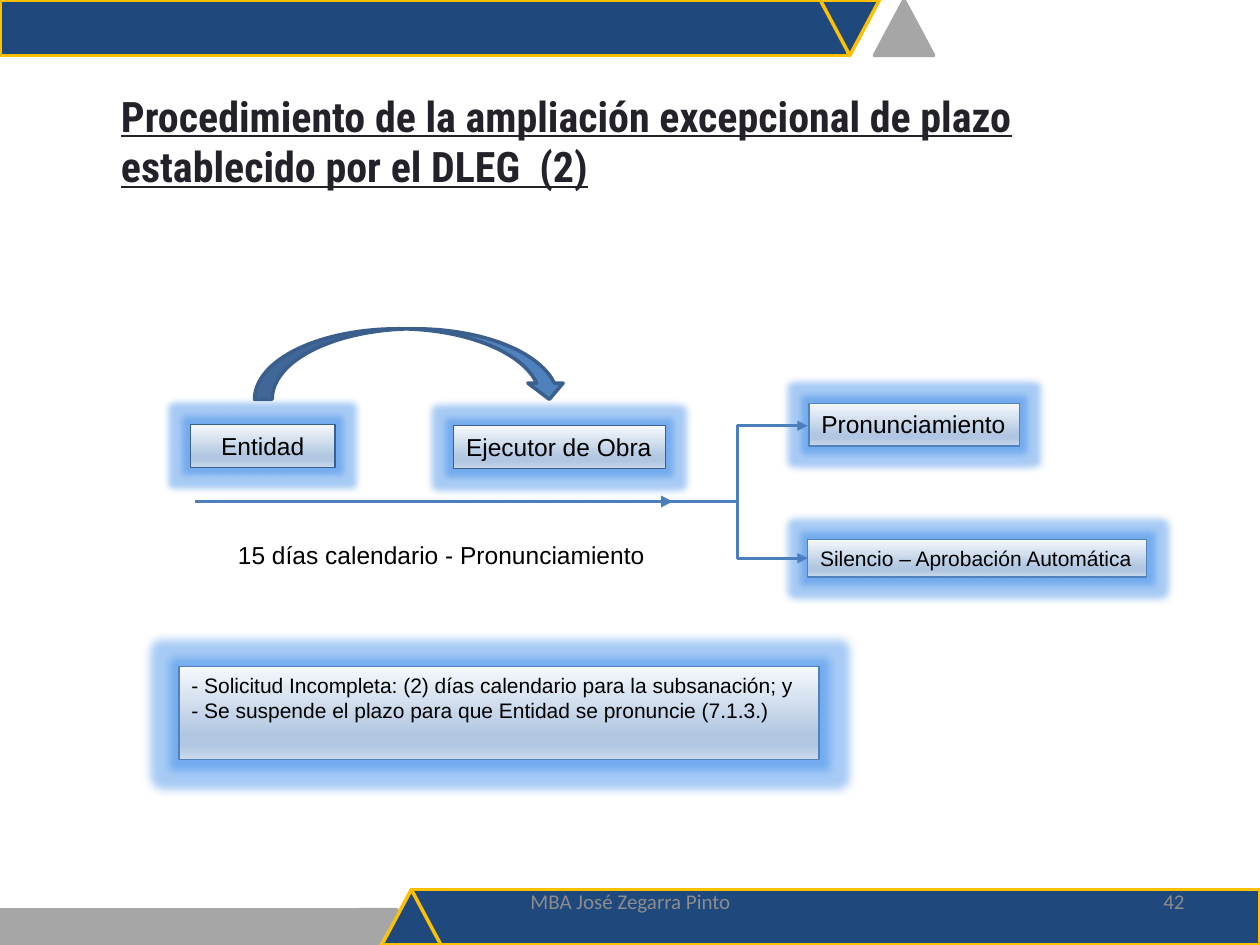
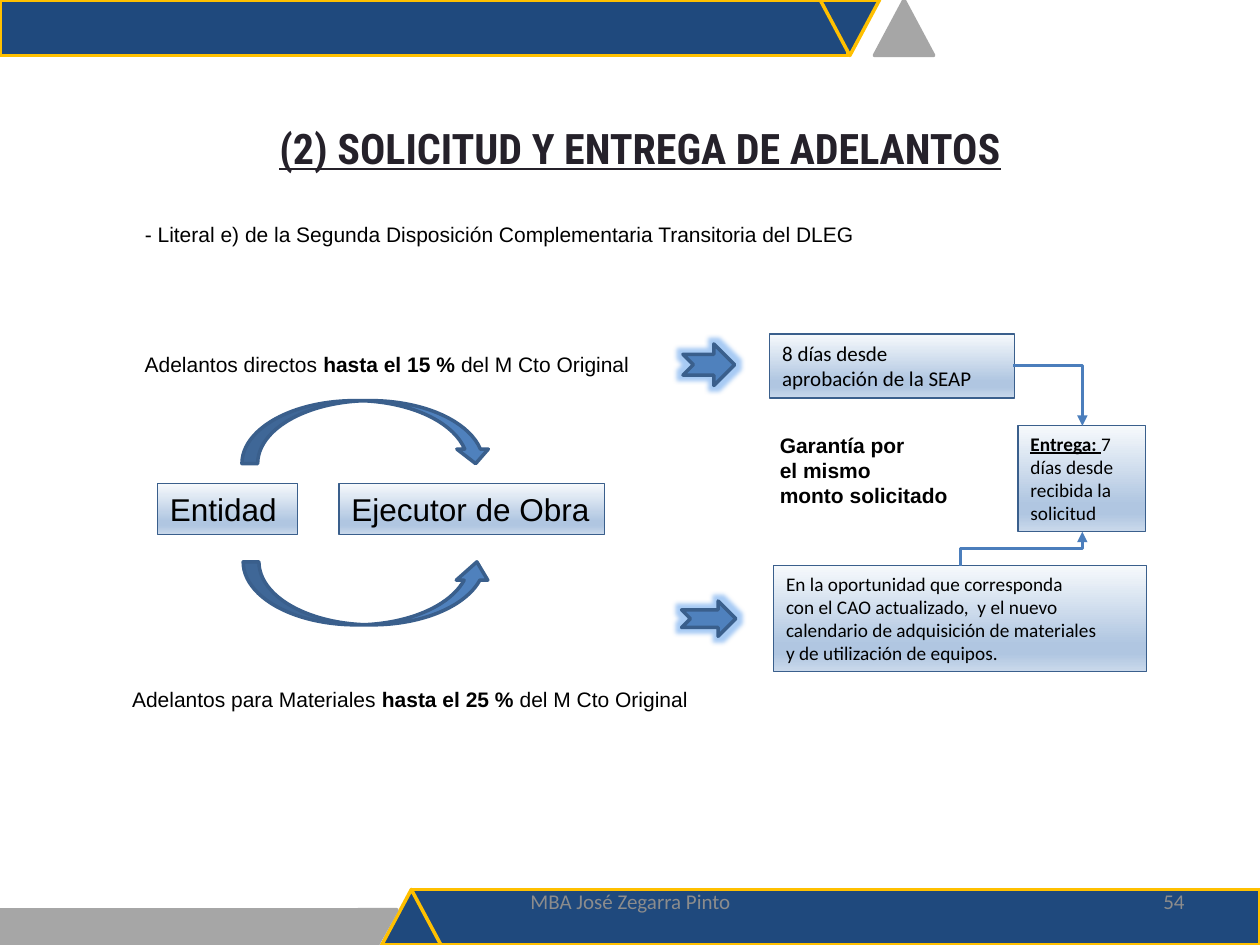
from lxml import etree
from pptx import Presentation
from pptx import util as u
from pptx.dml.color import RGBColor
from pptx.enum import shapes, text
from pptx.oxml import ns

COLORS = {
    "navy": "1F497D", "gold": "FFC000", "gray": "A6A6A6", "footer": "8C8C8C",
    "title": "25212A", "black": "000000", "blue": "4F81BD", "edge": "3A5F8C",
    "connector": "4B7EBC", "glow": "257DE6",
}
PANEL_STOPS = ((0, "F6F9FC"), (74, "B0C6E1"), (83, "B0C6E1"), (100, "CAD9EB"))
KIND = shapes.MSO_SHAPE
ALIGN = text.PP_ALIGN
ANCHOR = text.MSO_ANCHOR


def color(name):
    """Return the RGB value of a named colour."""
    return RGBColor.from_string(COLORS[name])


def add_child(parent, tag, **attributes):
    """Append a drawing element and return it."""
    values = {key: str(value) for key, value in attributes.items()}
    return etree.SubElement(parent, ns.qn(tag), values)


def inside(region, left, top, width, height):
    """Turn lengths relative to a region's corner into slide lengths."""
    return [u.Inches(round(value, 2)) for value in
            (region[0] + left, region[1] + top, width, height)]


def write(box, lines, size=12, font="Arial", ink="black", bold=False, underline=False,
          align=ALIGN.LEFT, anchor=ANCHOR.TOP, wrap=True):
    """Fill a box with lines, each a string or a list of (text, is marked) spans."""
    frame = box.text_frame
    frame.auto_size = text.MSO_AUTO_SIZE.NONE
    frame.word_wrap = wrap
    frame.vertical_anchor = anchor
    for index, line in enumerate(lines):
        para = frame.add_paragraph() if index else frame.paragraphs[0]
        para.alignment = align
        for words, marked in [(line, bold)] if isinstance(line, str) else line:
            span = para.add_run()
            span.text = words
            span.font.size = u.Pt(size)
            span.font.name = font
            span.font.bold = marked
            span.font.underline = underline and marked
            span.font.color.rgb = color(ink)
    return box


def add_label(page, place, lines, **style):
    """Add a plain text box."""
    return write(page.shapes.add_textbox(*place), lines, **style)


def add_figure(page, kind, place, fill="blue", edge="edge", weight=2, turn=0, glow=0):
    """Add a preset shape with a solid fill and an optional glow."""
    figure = page.shapes.add_shape(kind, *place)
    figure.rotation = turn
    figure.shadow.inherit = False
    figure.fill.solid()
    figure.fill.fore_color.rgb = color(fill)
    figure.line.color.rgb = color(edge)
    figure.line.width = u.Pt(weight)
    if glow:
        effects = figure._element.spPr.find(ns.qn("a:effectLst"))
        halo = add_child(effects, "a:glow", rad=u.Pt(glow))
        tint = add_child(halo, "a:srgbClr", val=COLORS["glow"])
        add_child(tint, "a:alpha", val=40000)
    return figure


def add_panel(page, place, lines, edge="edge", glow=0, **style):
    """Add a gradient panel with text."""
    panel = add_figure(page, KIND.RECTANGLE, place, edge=edge, weight=0.75, glow=glow)
    panel.fill.gradient()
    panel.fill.gradient_angle = 270
    stops = panel._element.spPr.find(ns.qn("a:gradFill")).find(ns.qn("a:gsLst"))
    for stop in list(stops):
        stops.remove(stop)
    for percent, value in PANEL_STOPS:
        add_child(add_child(stops, "a:gs", pos=percent * 1000), "a:srgbClr", val=value)
    return write(panel, lines, **style)


def add_arc_arrow(page, place, head=0.23, upward=False):
    """Add a curved arrow that runs from left to right."""
    arrow = add_figure(page, KIND.CURVED_DOWN_ARROW, place)
    arrow.adjustments[2] = head
    if upward:
        arrow._element.spPr.find(ns.qn("a:xfrm")).set("flipV", "1")


def add_arrow(page, place, preset="bentConnector3", weight=1.75, **transform):
    """Add a connector with an arrowhead across a place."""
    left, top, width, height = place
    arrow = page.shapes.add_connector(
        shapes.MSO_CONNECTOR.ELBOW, left, top, left + width, top + height)
    arrow.line.color.rgb = color("connector")
    arrow.line.width = u.Pt(weight)
    properties = arrow._element.spPr
    properties.find(ns.qn("a:prstGeom")).set("prst", preset)
    for key, value in transform.items():
        properties.find(ns.qn("a:xfrm")).set(key, str(value))
    add_child(properties.find(ns.qn("a:ln")), "a:tailEnd", type="triangle")
    add_child(properties, "a:effectLst")


def add_header(page, region):
    """Draw the band along the top."""
    add_figure(page, KIND.RECTANGLE, inside(region, 0, 0, 6.73, 0.44), "navy", "gold")
    for left, fill, edge, turn in ((6.51, "navy", "gold", 180), (6.94, "gray", "gray", 0)):
        add_figure(page, KIND.FLOWCHART_EXTRACT, inside(region, left, 0, 0.47, 0.44),
                   fill, edge, turn=turn)


def add_footer(page, region, number):
    """Draw the band along the bottom with the author and page number."""
    bands = (
        (KIND.RECTANGLE, (3.27, 0, 6.73, 0.44), "navy", "gold", 0),
        (KIND.RECTANGLE, (0, 0.16, 2.99, 0.28), "gray", "gray", 0),
        (KIND.FLOWCHART_EXTRACT, (3.03, 0, 0.47, 0.44), "navy", "gold", 0),
        (KIND.FLOWCHART_EXTRACT, (2.84, 0.16, 0.31, 0.28), "gray", "gray", 180),
    )
    for kind, place, fill, edge, turn in bands:
        add_figure(page, kind, inside(region, *place), fill, edge, turn=turn)
    for left, width, words, align in (
            (3.42, 3.17, "MBA José Zegarra Pinto", ALIGN.CENTER),
            (7.17, 2.33, str(number), ALIGN.RIGHT)):
        add_label(page, inside(region, left, -0.11, width, 0.4), [words],
                  font="Calibri", ink="footer", align=align, anchor=ANCHOR.MIDDLE)


def add_page(deck, words, place, number, align=ALIGN.LEFT):
    """Add a titled page with its bands."""
    page = deck.slides.add_slide(deck.slide_layouts[5])
    title = page.shapes.title
    title.left, title.top, title.width, title.height = inside((0, 0), *place)
    write(title, [words], size=24, font="Roboto Condensed", ink="title", bold=True,
          underline=True, align=align, anchor=ANCHOR.MIDDLE)
    add_header(page, (0, 0))
    add_footer(page, (0, 7.06), number)
    return page


def add_request(page, region):
    """Draw the request from the entity to the contractor."""
    add_arrow(page, inside(region, 0.04, 1.37, 3.79, 0), "line", 2.25)
    add_label(page, inside(region, 0.28, 1.63, 3.5, 0.34),
              ["15 días calendario - Pronunciamiento"], size=14, wrap=False)
    add_panel(page, inside(region, 2.09, 0.77, 1.68, 0.34), ["Ejecutor de Obra"],
              glow=8, size=14, wrap=False)
    add_panel(page, inside(region, 0, 0.76, 1.15, 0.34), ["Entidad"],
              glow=8, size=14, align=ALIGN.CENTER)
    add_arc_arrow(page, inside(region, 0.51, 0, 2.48, 0.56))


def add_outcomes(page, region):
    """Draw the two outcomes and the branches to them."""
    add_panel(page, inside(region, 1.12, 1.08, 2.69, 0.3),
              ["Silencio – Aprobación Automática"], "blue", 8, wrap=False)
    add_panel(page, inside(region, 1.13, 0, 1.67, 0.34),
              ["Pronunciamiento"], "blue", 8, size=14, wrap=False)
    add_arrow(page, inside(region, 0, 0.18, 1.12, 0.6), flipV=1)
    add_arrow(page, inside(region, 0, 0.78, 1.12, 0.45))


def add_note(page, region):
    """Draw the note on incomplete requests."""
    add_panel(page, inside(region, 0, 0, 5.08, 0.74), [
        "- Solicitud Incompleta: (2) días calendario para la subsanación; y",
        "- Se suspende el plazo para que Entidad se pronuncie (7.1.3.)",
    ], "blue", 11)


def add_advances(page, region):
    """Draw the two kinds of advance between entity and contractor."""
    add_panel(page, inside(region, 1.74, 1.1, 2.11, 0.4), ["Ejecutor de Obra"], size=18)
    add_panel(page, inside(region, 0.3, 1.1, 1.11, 0.4), ["Entidad"], size=18)
    add_arc_arrow(page, inside(region, 0.97, 0.44, 1.98, 0.5))
    add_arc_arrow(page, inside(region, 0.98, 1.72, 1.98, 0.5), 0.29, upward=True)
    for left, top, width, kind, limit in (
            (0.1, 0, 4.08, "Adelantos directos ", "hasta el 15 % "),
            (0, 2.66, 4.65, "Adelantos para Materiales ", "hasta el 25 % ")):
        add_label(page, inside(region, left, top, width, 0.3),
                  [[(kind, False), (limit, True), ("del M Cto Original", False)]],
                  wrap=False)


def add_delivery(page, region):
    """Draw the deadlines that lead to delivery."""
    for place in ((0, 2.12, 0.43, 0.28), (0.01, 0.08, 0.41, 0.33)):
        add_figure(page, KIND.NOTCHED_RIGHT_ARROW, inside(region, *place), glow=5)
    add_panel(page, inside(region, 0.7, 0, 1.94, 0.51),
              ["8 días desde", "aprobación de la SEAP"], font="Calibri", wrap=False)
    add_label(page, inside(region, 0.68, 0.73, 1.65, 0.71),
              ["Garantía por", "el mismo", "monto solicitado"], bold=True)
    add_panel(page, inside(region, 0.73, 1.84, 2.96, 0.84), [
        "En la oportunidad que corresponda",
        "con el CAO actualizado,  y el nuevo",
        "calendario de adquisición de materiales",
        "y de utilización de equipos.",
    ], size=11, font="Calibri", wrap=False)
    add_panel(page, inside(region, 2.67, 0.73, 1.01, 0.84),
              [[("Entrega: ", True), ("7 días desde recibida la solicitud", False)]],
              size=11, font="Calibri", underline=True)
    add_arrow(page, inside(region, 2.63, 0.25, 0.55, 0.48), "bentConnector2")
    add_arrow(page, inside(region, 2.56, 1.22, 0.27, 0.97),
              rot=90 * 60000, flipH=1, flipV=1)


def build_extension(deck):
    """Build the page on the extension procedure."""
    page = add_page(
        deck, "Procedimiento de la ampliación excepcional de plazo establecido por el DLEG  (2)",
        (0.86, 0.73, 8.28, 0.77), 42)
    add_request(page, (1.51, 2.61))
    add_outcomes(page, (5.29, 3.2))
    add_note(page, (1.42, 5.29))


def build_advances(deck):
    """Build the page on advance payments."""
    page = add_page(deck, "(2) SOLICITUD Y ENTREGA DE ADELANTOS",
                    (1.22, 0.79, 7.72, 0.77), 54, ALIGN.CENTER)
    basis = add_label(page, inside((0.98, 1.71), 0, 0, 7.24, 0.43),
                      ["- Literal e) de la Segunda Disposición Complementaria Transitoria del DLEG"])
    basis.text_frame.margin_left = u.Inches(0.17)
    add_advances(page, (0.95, 2.74))
    add_delivery(page, (5.41, 2.65))


def main():
    """Build and save the deck."""
    deck = Presentation()
    deck.slide_width, deck.slide_height = u.Inches(10), u.Inches(7.5)
    build_extension(deck)
    build_advances(deck)
    deck.save("out.pptx")


if __name__ == "__main__":
    main()
